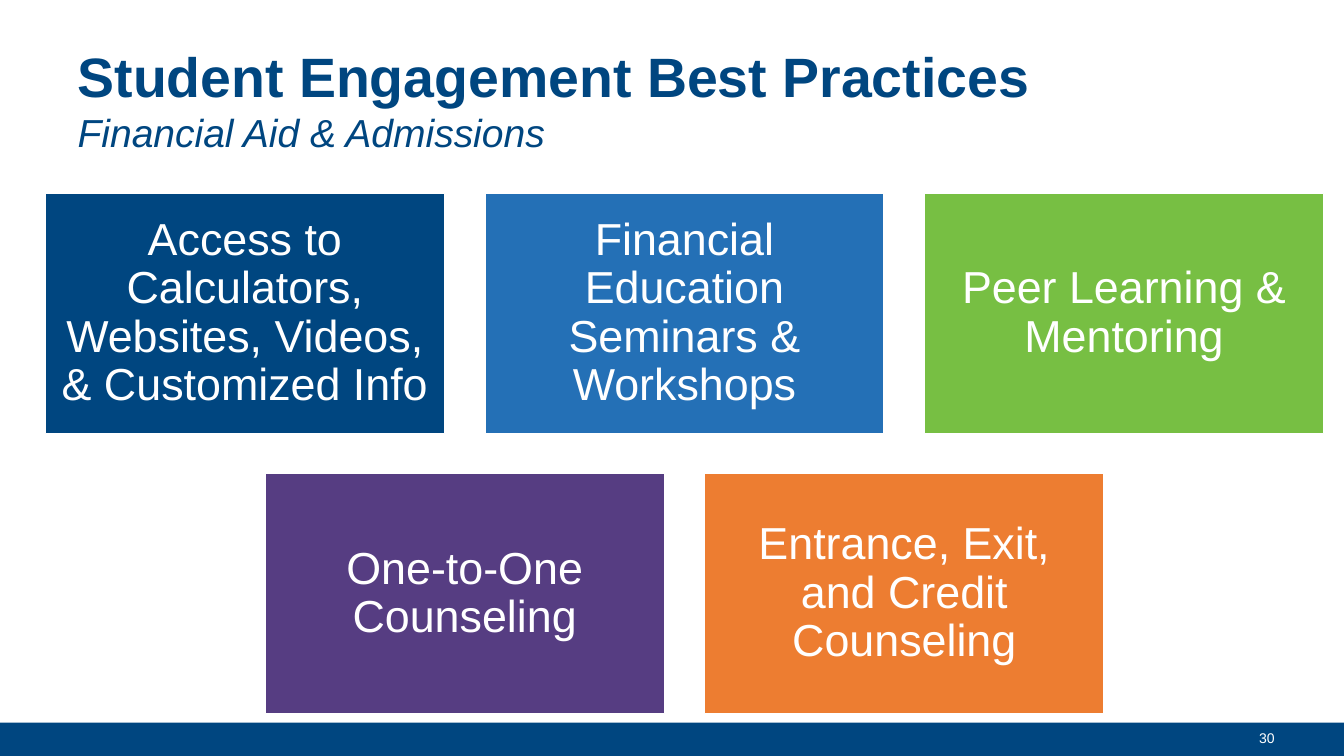
from pptx import Presentation
from pptx.dml.color import RGBColor
from pptx.enum.shapes import MSO_SHAPE
from pptx.enum.text import MSO_ANCHOR, MSO_AUTO_SIZE, PP_ALIGN
from pptx.util import Inches, Pt

RECTANGLE = MSO_SHAPE.RECTANGLE
MIDDLE = MSO_ANCHOR.MIDDLE
NO_AUTOFIT = MSO_AUTO_SIZE.NONE
LEFT, CENTER = PP_ALIGN.LEFT, PP_ALIGN.CENTER

SLIDE_WIDTH, SLIDE_HEIGHT = 13.33, 7.5
TITLE_ONLY = 5
NAVY, WHITE = "004680", "FFFFFF"

CARD_WIDTH, CARD_HEIGHT = 3.96, 2.38
CARD_GAP = 0.4
CARDS_TOP = 1.92
CARDS_CENTER = 6.79
PRACTICE_ROWS = [
    [
        ("Access to Calculators, Websites, Videos, & Customized Info", NAVY),
        ("Financial Education Seminars & Workshops", "2470B6"),
        ("Peer Learning & Mentoring", "77BF43"),
    ],
    [
        ("One-to-One Counseling", "563D82"),
        ("Entrance, Exit, and Credit Counseling", "ED7D31"),
    ],
]


def color(hex_code):
    return RGBColor.from_string(hex_code)


class PracticeSlide:
    """Holds the slide and the type style shared by its elements."""

    font_name = "Arial"

    def __init__(self, presentation):
        layout = presentation.slide_layouts[TITLE_ONLY]
        self.slide = presentation.slides.add_slide(layout)

    def style(self, paragraph, size, hex_code, bold=False, italic=False):
        for run in paragraph.runs:
            font = run.font
            font.name = self.font_name
            font.size = Pt(size)
            font.bold = bold
            font.italic = italic
            font.color.rgb = color(hex_code)

    def title(self, heading, subheading):
        title = self.slide.shapes.title
        title.left, title.top = Inches(0.67), Inches(0.3)
        title.width, title.height = Inches(12), Inches(1.25)
        frame = title.text_frame
        frame.text = f"{heading}\n{subheading}"
        frame.auto_size = NO_AUTOFIT
        frame.vertical_anchor = MIDDLE
        frame.margin_top = Inches(0.15)
        for paragraph in frame.paragraphs:
            paragraph.alignment = LEFT
        heading_line, subheading_line = frame.paragraphs
        self.style(heading_line, 39.6, NAVY, bold=True)
        self.style(subheading_line, 27.9, NAVY, italic=True)

    def block(self, left, top, width, height, fill):
        block = self.slide.shapes.add_shape(
            RECTANGLE, Inches(left), Inches(top), Inches(width), Inches(height)
        )
        block.shadow.inherit = False
        block.fill.solid()
        block.fill.fore_color.rgb = color(fill)
        block.line.fill.background()
        return block

    def card(self, left, top, practice, fill):
        card = self.block(left, top, CARD_WIDTH, CARD_HEIGHT, fill)
        card.line.color.rgb = color(WHITE)
        card.line.width = Pt(1)
        frame = card.text_frame
        frame.text = practice
        frame.word_wrap = True
        frame.vertical_anchor = MIDDLE
        frame.margin_left = frame.margin_right = Inches(0.13)
        frame.margin_top = frame.margin_bottom = Inches(0.13)
        paragraph = frame.paragraphs[0]
        paragraph.alignment = CENTER
        paragraph.line_spacing = 0.9
        self.style(paragraph, 32, WHITE)

    def card_row(self, top, practices):
        """Place one row of cards around the common centre line."""
        pitch = CARD_WIDTH + CARD_GAP
        left = CARDS_CENTER - (len(practices) * pitch - CARD_GAP) / 2
        for column, (practice, fill) in enumerate(practices):
            self.card(left + column * pitch, top, practice, fill)

    def page_number(self, number):
        box = self.slide.shapes.add_textbox(
            Inches(12.39), Inches(7.19), Inches(0.37), Inches(0.27)
        )
        box.text_frame.text = number
        self.style(box.text_frame.paragraphs[0], 10, WHITE)


def main():
    presentation = Presentation()
    presentation.slide_width = Inches(SLIDE_WIDTH)
    presentation.slide_height = Inches(SLIDE_HEIGHT)

    page = PracticeSlide(presentation)
    page.block(0, 7.17, SLIDE_WIDTH, 0.33, NAVY)
    page.page_number("30")
    page.title("Student Engagement Best Practices", "Financial Aid & Admissions")
    for row, practices in enumerate(PRACTICE_ROWS):
        page.card_row(CARDS_TOP + row * (CARD_HEIGHT + CARD_GAP), practices)

    presentation.save("out.pptx")


if __name__ == "__main__":
    main()
